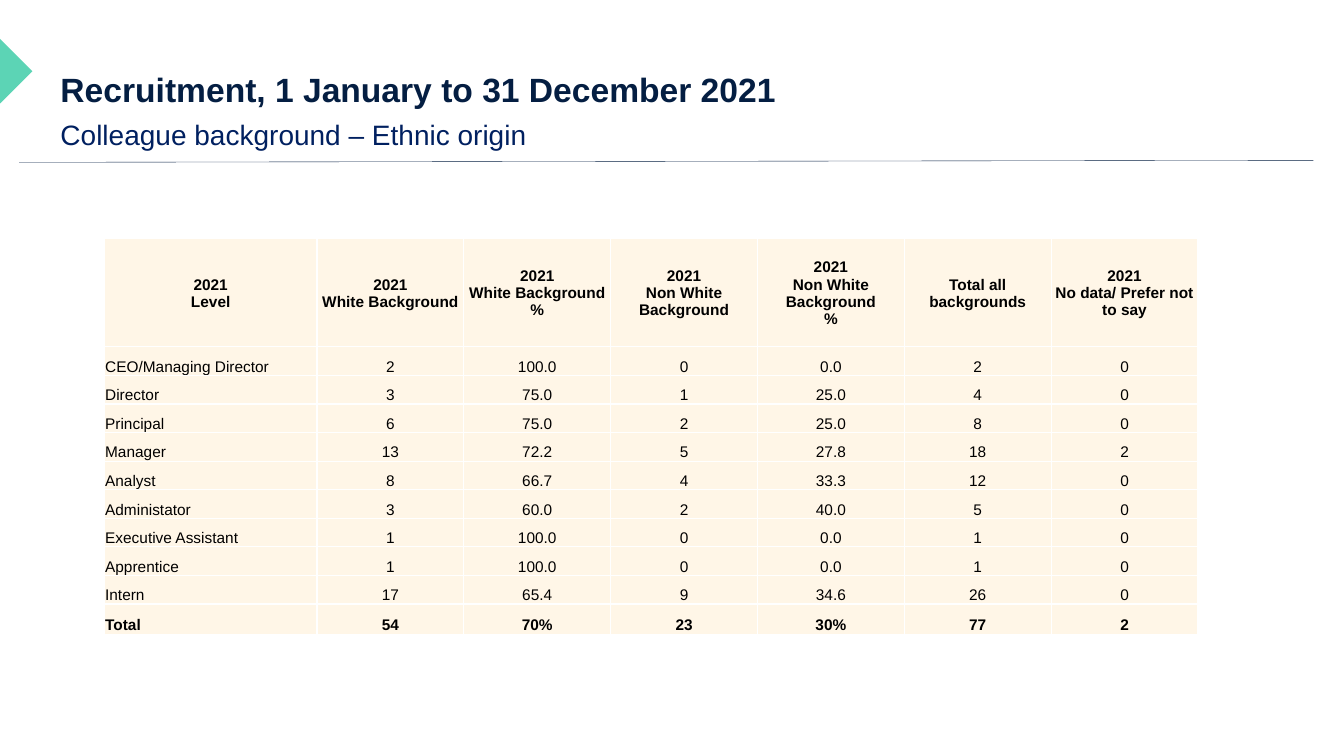
import copy

import pptx
import pptx.dml.color
import pptx.enum.shapes
import pptx.enum.text
import pptx.oxml
import pptx.oxml.ns
import pptx.util
from pptx.util import Cm

ALIGN = pptx.enum.text.PP_ALIGN
ANCHOR = pptx.enum.text.MSO_ANCHOR
NAVY, BLUE, TEAL = "041E42", "002060", "5CD4B5"
CREAM, BLACK, WHITE = "FFF6E7", "000000", "FFFFFF"

HEADERS = [
    "2021\nLevel",
    "2021\nWhite Background",
    "2021\nWhite Background\n%",
    "2021\nNon White Background",
    "2021\nNon White Background\n%",
    "Total all backgrounds",
    "2021\nNo data/ Prefer not to say",
]
LEVELS = [
    ["CEO/Managing Director", "2", "100.0", "0", "0.0", "2", "0"],
    ["Director", "3", "75.0", "1", "25.0", "4", "0"],
    ["Principal", "6", "75.0", "2", "25.0", "8", "0"],
    ["Manager", "13", "72.2", "5", "27.8", "18", "2"],
    ["Analyst", "8", "66.7", "4", "33.3", "12", "0"],
    ["Administator", "3", "60.0", "2", "40.0", "5", "0"],
    ["Executive Assistant", "1", "100.0", "0", "0.0", "1", "0"],
    ["Apprentice", "1", "100.0", "0", "0.0", "1", "0"],
    ["Intern", "17", "65.4", "9", "34.6", "26", "0"],
]
TOTAL = ["Total", "54", "70%", "23", "30%", "77", "2"]


def color(hex_string):
    return pptx.dml.color.RGBColor.from_string(hex_string)


def write_text(text_frame, text, size, hex_color=BLACK, bold=False,
               align=ALIGN.LEFT, anchor=ANCHOR.TOP, line_spacing=1.0):
    """Fill the frame with one paragraph; newlines become line breaks."""
    text_frame.word_wrap = True
    text_frame.vertical_anchor = anchor
    paragraph = text_frame.paragraphs[0]
    paragraph.text = text
    paragraph.alignment = align
    paragraph.line_spacing = line_spacing
    paragraph.space_before = pptx.util.Pt(0)
    for run in paragraph.runs:
        run.font.name = "Arial"
        run.font.size = pptx.util.Pt(size)
        run.font.bold = bold
        run.font.color.rgb = color(hex_color)
    run_format = paragraph.runs[0].font._element
    for line_break in paragraph._p.findall(pptx.oxml.ns.qn("a:br")):
        line_break.append(copy.deepcopy(run_format))


def place(shape, left, top, width, height):
    shape.left, shape.top = Cm(left), Cm(top)
    shape.width, shape.height = Cm(width), Cm(height)


def remove_bullet(paragraph):
    properties = paragraph._p.get_or_add_pPr()
    properties.set("marL", "0")
    properties.set("indent", "0")
    pptx.oxml.ns.qn("a:buNone")
    properties.append(pptx.oxml.parse_xml(
        f'<a:buNone {pptx.oxml.ns.nsdecls("a")}/>'))


def set_cell_borders(cell, hex_color, points):
    properties = cell._tc.get_or_add_tcPr()
    for index, side in enumerate(("lnL", "lnR", "lnT", "lnB")):
        properties.insert(index, pptx.oxml.parse_xml(
            f'<a:{side} {pptx.oxml.ns.nsdecls("a")} w="{pptx.util.Pt(points)}">'
            f'<a:solidFill><a:srgbClr val="{hex_color}"/></a:solidFill>'
            f'</a:{side}>'))


def add_heading(slide, left, top, width):
    title, subtitle = slide.shapes.title, slide.placeholders[1]
    place(title, left, top, width, 1.6)
    place(subtitle, left, top + 1.4, width - 3, 1.04)
    remove_bullet(subtitle.text_frame.paragraphs[0])
    for placeholder in (title, subtitle):
        placeholder.text_frame.auto_size = pptx.enum.text.MSO_AUTO_SIZE.NONE
    write_text(title.text_frame, "Recruitment, 1 January to 31 December 2021",
               24, NAVY, bold=True, anchor=ANCHOR.MIDDLE, line_spacing=0.9)
    write_text(subtitle.text_frame, "Colleague background – Ethnic origin",
               20, BLUE, line_spacing=0.9)


def add_corner_marker(slide, left, top, size):
    marker = slide.shapes.add_shape(
        pptx.enum.shapes.MSO_SHAPE.RIGHT_TRIANGLE,
        Cm(left), Cm(top), Cm(size), Cm(size))
    marker.rotation = 225
    marker.shadow.inherit = False
    marker.fill.solid()
    marker.fill.fore_color.rgb = color(TEAL)
    marker.line.fill.background()


def add_heading_rule(slide, left, top, width, rise):
    rule = slide.shapes.add_connector(
        pptx.enum.shapes.MSO_CONNECTOR.STRAIGHT,
        Cm(left), Cm(top), Cm(left + width), Cm(top - rise))
    rule.line.color.rgb = color(NAVY)
    rule.line.width = pptx.util.Pt(0.25)
    rule._element.spPr.append(pptx.oxml.parse_xml(
        f'<a:effectLst {pptx.oxml.ns.nsdecls("a")}/>'))


def format_cell(cell, text, **text_format):
    cell.margin_left = cell.margin_right = cell.margin_top = Cm(0.02)
    cell.margin_bottom = 0
    cell.fill.solid()
    cell.fill.fore_color.rgb = color(CREAM)
    set_cell_borders(cell, WHITE, 1)
    anchor = text_format.pop("anchor")
    write_text(cell.text_frame, text, 11, **text_format)
    cell.vertical_anchor = anchor


def add_recruitment_table(slide, left, top):
    rows = [HEADERS, *LEVELS, TOTAL]
    widths = [5.36] + [3.7] * (len(HEADERS) - 1)
    heights = [2.72] + [0.72] * len(LEVELS) + [0.76]
    table = slide.shapes.add_table(
        len(rows), len(widths), Cm(left), Cm(top),
        Cm(sum(widths)), Cm(sum(heights))).table
    table.horz_banding = False
    for column, width in zip(table.columns, widths):
        column.width = Cm(width)
    for row, height in zip(table.rows, heights):
        row.height = Cm(height)
    for row_index, values in enumerate(rows):
        is_header = values is HEADERS
        for column_index, value in enumerate(values):
            is_label = column_index == 0 and not is_header
            format_cell(table.cell(row_index, column_index), value,
                        bold=is_header or values is TOTAL,
                        align=ALIGN.LEFT if is_label else ALIGN.CENTER,
                        anchor=ANCHOR.MIDDLE if is_header else ANCHOR.BOTTOM)


def main():
    presentation = pptx.Presentation()
    presentation.slide_width = Cm(33.87)
    presentation.slide_height = Cm(19.05)
    slide = presentation.slides.add_slide(presentation.slide_layouts[1])
    add_corner_marker(slide, left=-0.57, top=1.22, size=1.15)
    add_heading_rule(slide, left=0.48, top=4.09, width=32.62, rise=0.05)
    add_heading(slide, left=1.27, top=1.52, width=24.51)
    add_recruitment_table(slide, left=2.63, top=6.02)
    presentation.save("out.pptx")


if __name__ == "__main__":
    main()
